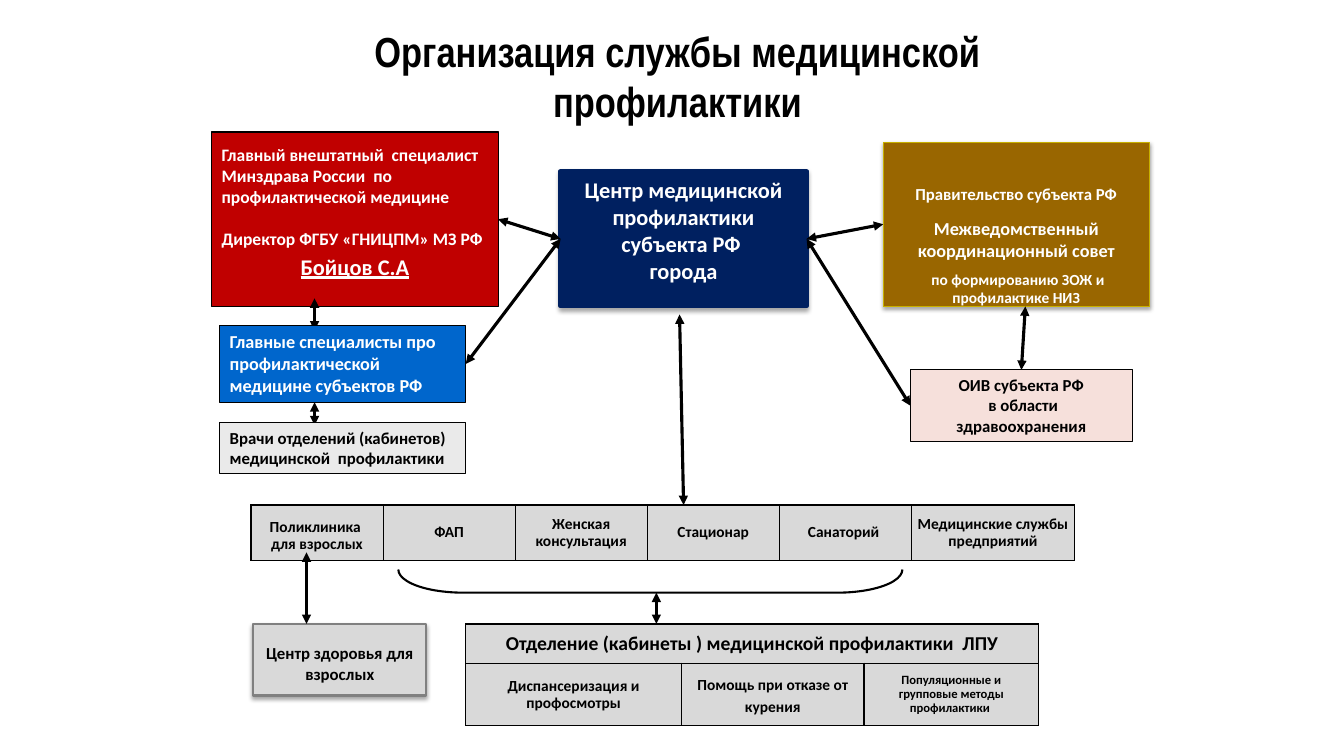
import pptx
import pptx.util
import pptx.dml.color
import pptx.oxml
import pptx.oxml.ns
import pptx.enum.shapes
import pptx.enum.text

Inches, Pt = pptx.util.Inches, pptx.util.Pt
SHAPE = pptx.enum.shapes.MSO_SHAPE
ANCHOR = pptx.enum.text.MSO_ANCHOR
LEFT, CENTER = pptx.enum.text.PP_ALIGN.LEFT, pptx.enum.text.PP_ALIGN.CENTER
BLACK, WHITE, GREY = "000000", "FFFFFF", "D9D9D9"
TOP, LEFT_SIDE, RIGHT_SIDE = 0, 1, 3


def rgb(value):
    return pptx.dml.color.RGBColor.from_string(value)


def xml(tag, body="", **attrs):
    """Make one DrawingML element from its tag, inner markup and attributes."""
    text = "".join(f' {name}="{value}"' for name, value in attrs.items())
    return pptx.oxml.parse_xml(
        f'<a:{tag} {pptx.oxml.ns.nsdecls("a")}{text}>{body}</a:{tag}>')


def write(tf, lines, color, align=CENTER, font="Calibri", spacing=None):
    """Fill a text frame; each line is (text, size, space before, space after)."""
    tf.word_wrap = True
    for i, (text, size, before, after) in enumerate(lines):
        p = tf.paragraphs[0] if i == 0 else tf.add_paragraph()
        p.alignment = align
        p.space_before, p.space_after = Pt(before), Pt(after)
        if spacing:
            p.line_spacing = spacing
        r = p.add_run()
        r.text = text
        r.font.name, r.font.size, r.font.bold = font, Pt(size), True
        r.font.color.rgb = rgb(color)


def add_title(s, x, y, w, h):
    tf = s.shapes.add_textbox(Inches(x), Inches(y), Inches(w), Inches(h)).text_frame
    write(tf, [("Организация службы медицинской профилактики", 30, 0, 0)],
          BLACK, font="Arial Narrow")


def add_box(s, x, y, w, h, fill, lines, color=BLACK, align=CENTER, line=BLACK,
            weight=0.75, top=0.05, bottom=0.05, shadow=False):
    sp = s.shapes.add_shape(SHAPE.RECTANGLE, Inches(x), Inches(y), Inches(w), Inches(h))
    sp.fill.solid()
    sp.fill.fore_color.rgb = rgb(fill)
    sp.line.color.rgb = rgb(line)
    sp.line.width = Pt(weight)
    sp.shadow.inherit = False
    if shadow:
        effects = sp._element.spPr.find(pptx.oxml.ns.qn("a:effectLst"))
        effects.append(xml(
            "outerShdw", '<a:srgbClr val="000000"><a:alpha val="35000"/></a:srgbClr>',
            blurRad=Pt(3.1), dist=Pt(1.8), dir=5400000, rotWithShape=0))
    tf = sp.text_frame
    tf.vertical_anchor = ANCHOR.TOP
    tf.margin_top, tf.margin_bottom = Inches(top), Inches(bottom)
    write(tf, lines, color, align)
    return sp


def add_arrow(s, x1=0, y1=0, x2=0, y2=0, begin=None, end=None):
    """Draw a two-headed arrow; begin and end are (shape, side) joints."""
    c = s.shapes.add_connector(pptx.enum.shapes.MSO_CONNECTOR.STRAIGHT,
                               Inches(x1), Inches(y1), Inches(x2), Inches(y2))
    if begin:
        c.begin_connect(*begin)
    if end:
        c.end_connect(*end)
    c.line.color.rgb = rgb(BLACK)
    c.line.width = Pt(2.25)
    ln = c.line._get_or_add_ln()
    ln.append(xml("headEnd", type="triangle"))
    ln.append(xml("tailEnd", type="triangle"))
    c._element.spPr.append(xml("effectLst"))


def add_grid(s, x, y, widths, heights):
    """Add an unstyled table with the given column widths and row heights."""
    frame = s.shapes.add_table(len(heights), len(widths), Inches(x), Inches(y),
                               Inches(sum(widths)), Inches(sum(heights)))
    table = frame.table
    table.first_row = table.horz_banding = False
    for column, width in zip(table.columns, widths):
        column.width = Inches(width)
    for row, height in zip(table.rows, heights):
        row.height = Inches(height)
    for cell in table.iter_cells():
        cell.fill.solid()
        cell.fill.fore_color.rgb = rgb(GREY)
        for i, side in enumerate(("lnL", "lnR", "lnT", "lnB")):
            cell._tc.get_or_add_tcPr().insert(i, xml(
                side, '<a:solidFill><a:srgbClr val="000000"/></a:solidFill>', w=Pt(1)))
    return table


def fill_cell(cell, texts, size=11, side=0.06, top=0, spacing=0.9, anchor=ANCHOR.MIDDLE):
    cell.margin_left = cell.margin_right = Inches(side)
    cell.margin_top, cell.margin_bottom = Inches(top), 0
    cell.vertical_anchor = anchor
    write(cell.text_frame, [(text, size, 0, 0) for text in texts], BLACK, spacing=spacing)


def add_institutions(s, x, y):
    table = add_grid(s, x, y, [1.31] * 5 + [1.62], [0.55])
    institutions = [["Поликлиника ", "для взрослых"], ["ФАП"], ["Женская консультация"],
                    ["Стационар"], ["Санаторий "], ["Медицинские службы", "предприятий"]]
    for i, texts in enumerate(institutions):
        fill_cell(table.cell(0, i), texts, top=0.06 if i == 0 else 0)


def add_department(s, x, y):
    table = add_grid(s, x, y, [2.14, 1.81, 1.73], [0.39, 0.62])
    table.cell(0, 0).merge(table.cell(0, 2))
    fill_cell(table.cell(0, 0), ["Отделение (кабинеты ) медицинской профилактики  ЛПУ"],
              14, 0.08, 0.08, 1.0, ANCHOR.TOP)
    tasks = [("Диспансеризация и профосмотры", 11, 0.9),
             ("Помощь при отказе от курения", 11, 1.15),
             ("Популяционные и групповые методы профилактики ", 9, 0.9)]
    for i, (text, size, spacing) in enumerate(tasks):
        fill_cell(table.cell(1, i), [text], size, 0.08, spacing=spacing)


def add_bracket(s, x, y, w, h):
    """Place a bracket that opens upwards and fills the given box."""
    sp = s.shapes.add_shape(SHAPE.RIGHT_BRACKET, Inches(x + (w - h) / 2),
                            Inches(y + (h - w) / 2), Inches(h), Inches(w))
    sp.rotation = 90
    sp.adjustments[0] = 2.8
    sp.fill.background()
    sp.line.color.rgb = rgb(BLACK)
    sp.line.width = Pt(1.5)
    sp.shadow.inherit = False


def add_specialists(s, x, y):
    """Stack chief specialist, regional specialists and doctors; return the first two."""
    chief = add_box(s, x, y, 2.84, 1.73, "C00000", [
        ("Главный внештатный  специалист Минздрава России  по профилактической медицине",
         12.5, 0, 0),
        ("Директор ФГБУ «ГНИЦПМ» МЗ РФ", 12.5, 14.6, 3),
        ("Бойцов С.А", 16, 0, 0)], WHITE, LEFT, top=0.12)
    name = chief.text_frame.paragraphs[-1]
    name.alignment = CENTER
    name.runs[0].font.underline = True
    add_arrow(s, x + 1.02, y + 1.65, x + 1.02, y + 1.97)
    add_arrow(s, x + 1.02, y + 2.68, x + 1.02, y + 2.91)
    regional = add_box(s, x + 0.08, y + 1.92, 2.44, 0.76, "0066CC", [
        ("Главные специалисты про профилактической медицине субъектов РФ", 13, 0, 0)],
        WHITE, LEFT)
    add_box(s, x + 0.08, y + 2.88, 2.44, 0.51, "EAEAEA", [
        ("Врачи отделений (кабинетов) медицинской  профилактики", 12, 0, 0)], align=LEFT)
    return chief, regional


def add_authorities(s, x, y):
    """Place the regional government above its health authority; return both."""
    government = add_box(s, x, y, 2.64, 1.63, "996600", [
        ("Правительство субъекта РФ", 12, 0, 10),
        ("Межведомственный координационный совет", 13, 0, 6),
        (" по формированию ЗОЖ и профилактике НИЗ", 11, 0, 0)],
        WHITE, line="C8B000", top=0.41, bottom=0, shadow=True)
    health = add_box(s, x + 0.27, y + 2.26, 2.2, 0.71, "F6E0DB", [
        ("ОИВ субъекта РФ", 12, 0, 0), (" в области здравоохранения", 12, 0, 0)])
    add_arrow(s, x + 1.41, y + 1.63, end=(health, TOP))
    return government, health


def build_slide(s):
    add_title(s, 2.41, 0.2, 8.62, 1.11)
    add_institutions(s, 2.49, 5.01)
    add_bracket(s, 3.95, 5.65, 5, 0.23)
    add_department(s, 4.62, 6.19)
    chief, regional = add_specialists(s, 2.1, 1.31)
    add_box(s, 2.51, 6.19, 1.72, 0.71, GREY, [("Центр здоровья для взрослых", 12, 0, 10)],
            line="808080", weight=1.5, top=0.19, shadow=True)
    government, health = add_authorities(s, 8.76, 1.41)
    center = add_box(s, 5.56, 1.7, 2.44, 1.34, "002060", [
        ("Центр медицинской профилактики субъекта РФ ", 16, 0, 0), ("города", 16, 0, 10)],
        WHITE, line="002060", weight=3, shadow=True)
    for partner in (chief, regional):
        add_arrow(s, begin=(partner, RIGHT_SIDE), end=(center, LEFT_SIDE))
    for partner in (government, health):
        add_arrow(s, begin=(center, RIGHT_SIDE), end=(partner, LEFT_SIDE))
    add_arrow(s, 6.74, 3.12, 6.78, 5.01)
    add_arrow(s, 6.51, 5.88, 6.51, 6.19)
    add_arrow(s, 3.04, 5.48, 3.04, 6.19)


def main():
    prs = pptx.Presentation()
    prs.slide_width, prs.slide_height = Inches(13.33), Inches(7.5)
    build_slide(prs.slides.add_slide(prs.slide_layouts[6]))
    prs.save("out.pptx")


if __name__ == "__main__":
    main()
